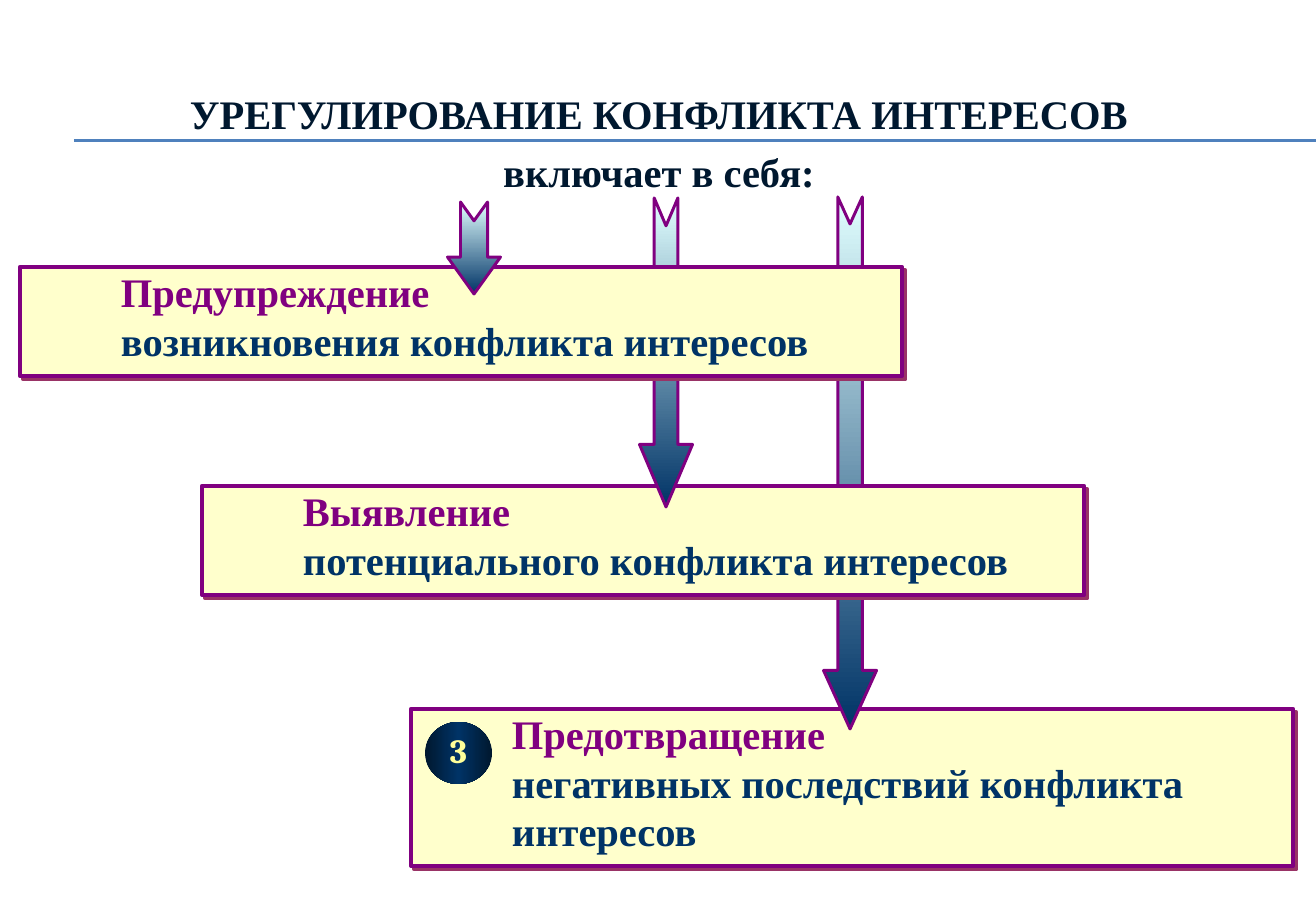
import copy

import pptx
import pptx.dml.color
import pptx.enum.shapes
import pptx.enum.text
import pptx.oxml
import pptx.oxml.ns
import pptx.util

PX = 914400 / 121.5
SHAPES = pptx.enum.shapes.MSO_SHAPE
ANCHOR = pptx.enum.text.MSO_ANCHOR
CENTER = pptx.enum.text.PP_ALIGN.CENTER
NS = pptx.oxml.ns.nsdecls("a")


def px(*lengths):
    """Turn pixel lengths into a list of EMU lengths."""
    return [pptx.util.Emu(round(length * PX)) for length in lengths]


def rgb(value):
    return pptx.dml.color.RGBColor.from_string(value)


prs = pptx.Presentation()
prs.slide_width, prs.slide_height = px(1316, 911)
slide = prs.slides.add_slide(prs.slide_layouts[5])

# Rules across the heading
for left, y in ((74, 140), (74, 141)):
    rule = slide.shapes.add_connector(
        pptx.enum.shapes.MSO_CONNECTOR.STRAIGHT, *px(left, y, 1316, y))
    rule.line.color.rgb = rgb("4F81BD")
    rule.line.width = pptx.util.Pt(0.75)
    rule._element.spPr.append(pptx.oxml.parse_xml(f"<a:effectLst {NS}/>"))

# Heading
heading = slide.shapes.title
heading.left, heading.top, heading.width, heading.height = px(117, 83, 1084, 100)
heading.text_frame.text = "УРЕГУЛИРОВАНИЕ КОНФЛИКТА ИНТЕРЕСОВ\nвключает в себя:"
heading.text_frame.vertical_anchor = ANCHOR.TOP
heading.text_frame.auto_size = pptx.enum.text.MSO_AUTO_SIZE.NONE
heading.text_frame.word_wrap = False
for paragraph in heading.text_frame.paragraphs:
    paragraph.alignment = CENTER
    paragraph.font.name = "Times New Roman"
    paragraph.font.size = pptx.util.Pt(24)
    paragraph.font.bold = True
    paragraph.font.color.rgb = rgb("00182F")
heading.text_frame.paragraphs[1].space_before = pptx.util.Pt(5.5)

# Steps, from the back one to the front one:
# action, object, box (left, top, height), arrow (centre, top, length, adjustments)
steps = [
    ("Предотвращение", "негативных последствий конфликта интересов",
     (411, 709, 157), (850, 197, 532, (0.463, 1.103))),
    ("Выявление", "потенциального конфликта интересов",
     (202, 486, 109), (666, 198, 309, (0.447, 1.178))),
    ("Предупреждение", "возникновения конфликта интересов",
     (20, 267, 109), (474, 202, 92, (0.51, 0.696))),
]
ARROW_BREADTH = 53
for action, subject, (left, top, height), (center, start, length, bends) in steps:
    box = slide.shapes.add_shape(SHAPES.RECTANGLE, *px(left, top, 882, height))
    box.fill.solid()
    box.fill.fore_color.rgb = rgb("FFFFCC")
    box.line.color.rgb = rgb("800080")
    box.line.width = pptx.util.Pt(2.5)
    box.shadow.inherit = False
    effects = box._element.spPr.find(pptx.oxml.ns.qn("a:effectLst"))
    effects.append(pptx.oxml.parse_xml(
        f'<a:outerShdw {NS} dist="35560" dir="2700000" algn="ctr" rotWithShape="0">'
        '<a:srgbClr val="993366"/></a:outerShdw>'))

    frame = box.text_frame
    frame.word_wrap = True
    frame.vertical_anchor = ANCHOR.TOP
    (frame.margin_left, frame.margin_top,
     frame.margin_right, frame.margin_bottom) = px(17, 0, 17, 7)
    paragraph = frame.paragraphs[0]
    paragraph.alignment = pptx.enum.text.PP_ALIGN.LEFT
    paragraph._p.get_or_add_pPr().set("marL", str(px(84)[0]))
    paragraph.font.name = "Times New Roman"
    paragraph.font.size = pptx.util.Pt(24)
    paragraph.font.bold = True
    action_run = paragraph.add_run()
    action_run.text = action
    action_run.font.color.rgb = rgb("800080")
    paragraph.add_line_break()
    subject_run = paragraph.add_run()
    subject_run.text = subject
    subject_run.font.color.rgb = rgb("003366")

    # The arrow lies flat and is turned about its centre to point down
    arrow = slide.shapes.add_shape(
        SHAPES.NOTCHED_RIGHT_ARROW,
        *px(center - length / 2, start + (length - ARROW_BREADTH) / 2,
            length, ARROW_BREADTH))
    arrow.rotation = 90
    arrow.adjustments[0], arrow.adjustments[1] = bends
    arrow.shadow.inherit = False
    arrow.line.color.rgb = rgb("800080")
    arrow.line.width = pptx.util.Pt(1.75)
    arrow.fill.gradient()
    arrow.fill.gradient_angle = 0
    for stop, color, position in zip(
            arrow.fill.gradient_stops, ("E1FFFF", "003366"), (0, 1)):
        stop.color.rgb = rgb(color)
        stop.position = position

# Number badge
badge = slide.shapes.add_shape(SHAPES.OVAL, *px(425, 722, 67, 62))
badge.shadow.inherit = False
badge.line.fill.background()
badge.fill.gradient()
badge.fill.gradient_angle = 0
stop_list = badge._element.spPr.find(".//" + pptx.oxml.ns.qn("a:gsLst"))
stop_list.append(copy.deepcopy(stop_list[0]))
for stop, color, position in zip(
        badge.fill.gradient_stops, ("00182F", "003366", "00182F"), (0, 0.5, 1)):
    stop.color.rgb = rgb(color)
    stop.position = position
frame = badge.text_frame
frame.vertical_anchor = ANCHOR.MIDDLE
(frame.margin_left, frame.margin_top,
 frame.margin_right, frame.margin_bottom) = px(0, 0, 0, 5)
frame.text = "3"
number = frame.paragraphs[0]
number.alignment = CENTER
number.font.name = "Cambria"
number.font.size = pptx.util.Pt(20)
number.font.bold = True
number.font.color.rgb = rgb("FFFF99")

prs.save("out.pptx")
